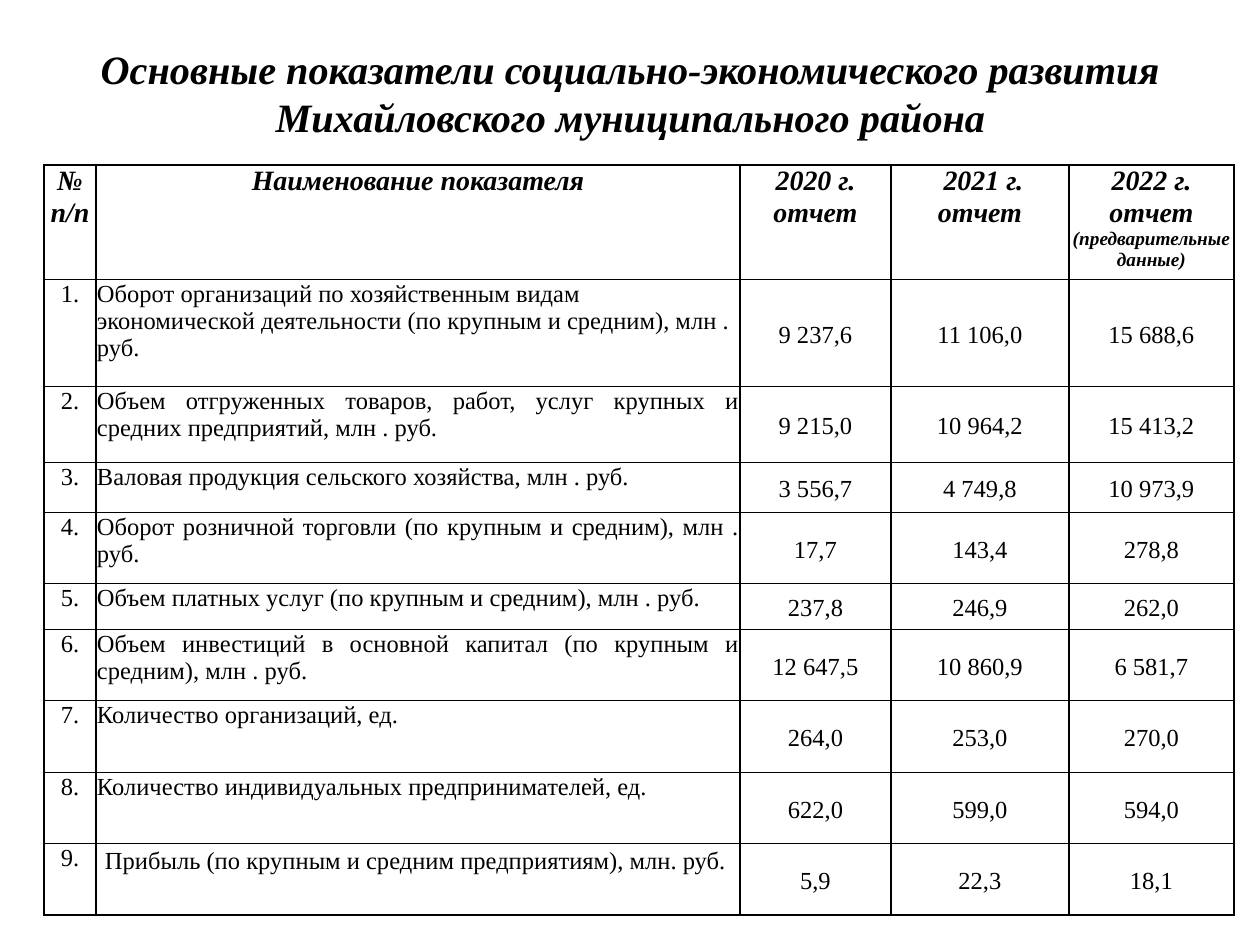
from dataclasses import dataclass

from lxml import etree
from pptx import Presentation
from pptx import util as u
from pptx.dml.color import RGBColor
from pptx.enum import text
from pptx.oxml import ns

PX_PER_INCH = 126


@dataclass(frozen=True)
class Theme:
    font: str = "Times New Roman"
    ink: str = "000000"
    paper: str = "FFFFFF"
    title: int = 23
    header: int = 16
    body: int = 14
    note: int = 11
    rule: float = 1
    thin_rule: float = 0.5


THEME = Theme()
LEFT, CENTER, JUSTIFY = (text.PP_ALIGN.LEFT, text.PP_ALIGN.CENTER,
                         text.PP_ALIGN.JUSTIFY)
TOP, MIDDLE = text.MSO_ANCHOR.TOP, text.MSO_ANCHOR.MIDDLE
TIGHT = (1, 1, 1, 0)  # cell margins: left, top, right, bottom
WIDE = (9, 0, 9, 0)

TITLE = ("Основные показатели социально-экономического развития "
         "Михайловского муниципального района")
COLUMNS = [52, 644, 151, 178, 165]
ROWS = [114, 107, 76, 50, 71, 46, 71, 72, 71, 72]
HEADERS = ["№ n/n", "Наименование показателя", "2020 г. отчет",
           " 2021 г. отчет", "2022 г. отчет "]
HEADER_NOTE = "(предварительные данные)"
INDICATORS = [
    ("Оборот организаций по хозяйственным видам экономической деятельности "
     "(по крупным и средним), млн . руб.", LEFT, "9 237,6", "11 106,0", "15 688,6"),
    ("Объем отгруженных товаров, работ, услуг крупных и средних предприятий, "
     "млн . руб.", JUSTIFY, "9 215,0", "10 964,2", "15 413,2"),
    ("Валовая продукция сельского хозяйства, млн . руб.",
     JUSTIFY, "3 556,7", "4 749,8", "10 973,9"),
    ("Оборот розничной торговли (по крупным и средним), млн . руб.",
     JUSTIFY, "17,7", "143,4", "278,8"),
    ("Объем платных услуг (по крупным и средним), млн . руб.",
     JUSTIFY, "237,8", "246,9", "262,0"),
    ("Объем инвестиций в основной капитал (по крупным и средним), млн . руб.",
     JUSTIFY, "12 647,5", "10 860,9", "6 581,7"),
    ("Количество организаций, ед.", JUSTIFY, "264,0", "253,0", "270,0"),
    ("Количество индивидуальных предпринимателей, ед.",
     LEFT, "622,0", "599,0", "594,0"),
    ("Прибыль (по крупным и средним предприятиям), млн. руб.",
     LEFT, "5,9", "22,3", "18,1"),
]


def px(length):
    return u.Emu(round(length * 914400 / PX_PER_INCH))


def add_span(para, content, size=THEME.body, strong=False):
    span = para.add_run()
    span.text = content
    font = span.font
    font.name, font.size = THEME.font, u.Pt(size)
    font.bold = font.italic = strong
    font.color.rgb = RGBColor.from_string(THEME.ink)


def write(frame, content, align=CENTER, spacing=None, **style):
    para = frame.paragraphs[0]
    para.alignment = align
    if spacing:
        para.line_spacing = spacing
    add_span(para, content, **style)
    return para


def add_title(slide):
    box = slide.shapes.add_textbox(px(64), px(35), px(1134), px(115))
    box.text_frame.word_wrap = True
    box.text_frame.vertical_anchor = MIDDLE
    write(box.text_frame, TITLE, size=THEME.title, strong=True)


def set_borders(cell, top, bottom):
    properties = cell._tc.get_or_add_tcPr()
    widths = {"L": THEME.rule, "R": THEME.rule, "T": top, "B": bottom}
    for side, width in widths.items():
        line = etree.SubElement(properties, ns.qn(f"a:ln{side}"), w=str(u.Pt(width)))
        fill = etree.SubElement(line, ns.qn("a:solidFill"))
        etree.SubElement(fill, ns.qn("a:srgbClr"), val=THEME.ink)


def fill_cell(cell, content, margins=TIGHT, anchor=TOP, **style):
    (cell.margin_left, cell.margin_top,
     cell.margin_right, cell.margin_bottom) = map(px, margins)
    cell.vertical_anchor = anchor
    return write(cell.text_frame, content, **style)


def add_table(slide):
    table = slide.shapes.add_table(len(ROWS), len(COLUMNS), px(44), px(165),
                                   px(sum(COLUMNS)), px(sum(ROWS))).table
    table.first_row = table.horz_banding = False
    for column, width in zip(table.columns, COLUMNS):
        column.width = px(width)
    for row, height in zip(table.rows, ROWS):
        row.height = px(height)

    # Thin rule under the header, full rules elsewhere
    for index, row in enumerate(table.rows):
        for cell in row.cells:
            set_borders(cell,
                        top=THEME.thin_rule if index == 1 else THEME.rule,
                        bottom=THEME.thin_rule if index == 0 else THEME.rule)
            cell.fill.solid()
            cell.fill.fore_color.rgb = RGBColor.from_string(THEME.paper)
    return table


def fill_table(table):
    # Header row
    for column, label in enumerate(HEADERS):
        para = fill_cell(table.cell(0, column), label,
                         size=THEME.header, strong=True)
    add_span(para, HEADER_NOTE, size=THEME.note, strong=True)

    # Numbered indicators; the last name is set with wider margins
    for row, (name, align, *values) in enumerate(INDICATORS, 1):
        fill_cell(table.cell(row, 0), f"{row}.")
        last = row == len(INDICATORS)
        fill_cell(table.cell(row, 1), name, align=align,
                  margins=WIDE if last else TIGHT, spacing=1.15 if last else None)
        for column, value in enumerate(values, 2):
            fill_cell(table.cell(row, column), value, margins=WIDE,
                      anchor=MIDDLE, spacing=1.15)


def main():
    deck = Presentation()
    deck.slide_width, deck.slide_height = px(1260), px(945)
    slide = deck.slides.add_slide(deck.slide_layouts[6])
    add_title(slide)
    fill_table(add_table(slide))
    deck.save("out.pptx")


if __name__ == "__main__":
    main()
